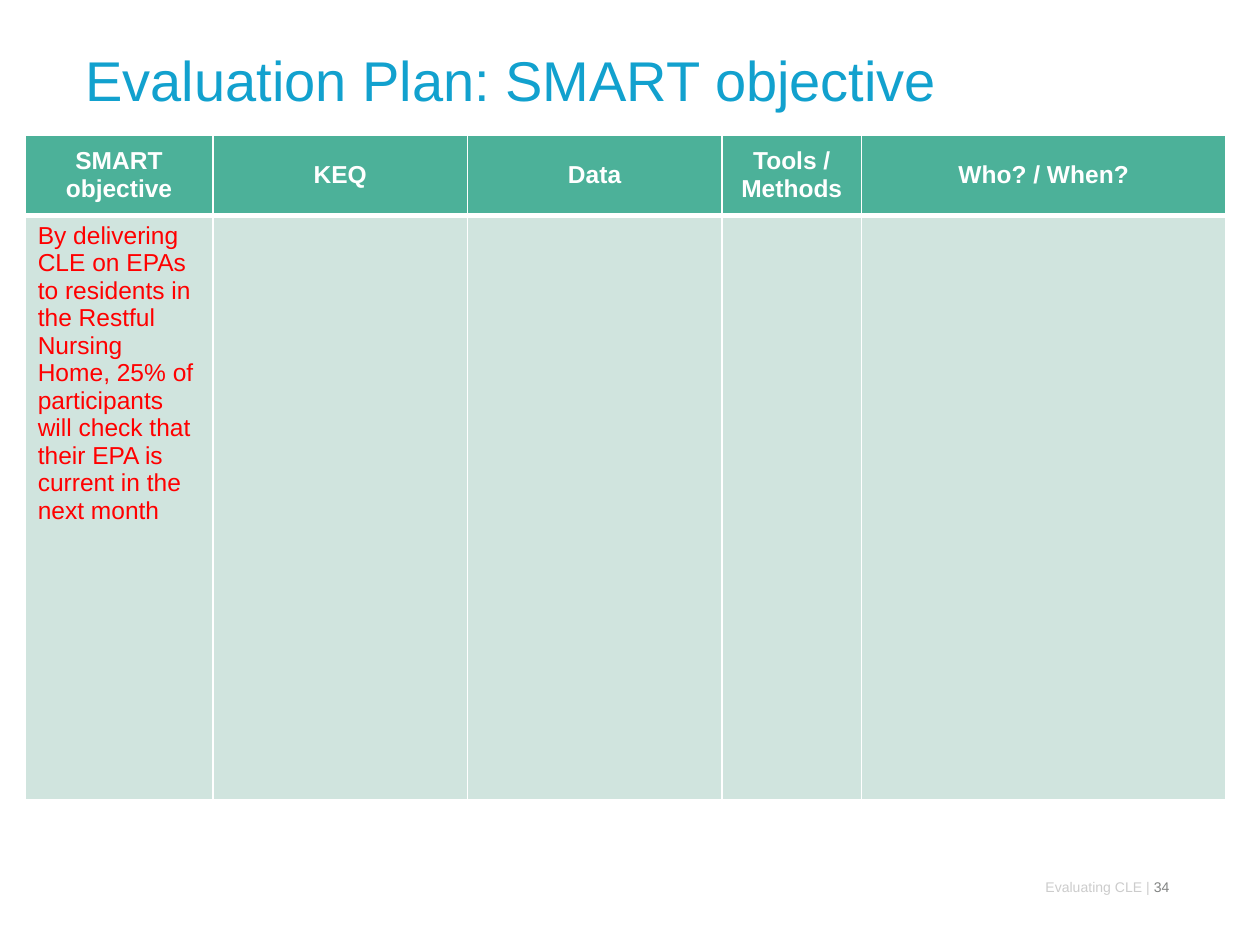
import pptx
import pptx.util
import pptx.dml.color
import pptx.enum.text
import pptx.oxml
import pptx.oxml.ns

Pt = pptx.util.Pt
ALIGN = pptx.enum.text.PP_ALIGN
ANCHOR = pptx.enum.text.MSO_ANCHOR
HUES = {"title": "12A1CE", "head": "4CB199", "body": "D0E4DE", "white": "FFFFFF",
        "red": "FF0000", "pale": "CCCCCC", "grey": "818382"}
HEADS = ["SMART objective", "KEQ", "Data", "Tools / Methods", "Who? /\u00a0When?"]
GOAL = ("By delivering CLE on EPAs to residents in the Restful Nursing Home, "
        "25% of participants will check that their EPA is current\u00a0in the next month")
COLS = [107.28, 145.44, 145.44, 79.92, 208.08]
ROWS = [46.08, 334.08]


def color(name):
    return pptx.dml.color.RGBColor.from_string(HUES[name])


def add_run(para, text, hue, **form):
    run = para.add_run()
    run.text = text
    run.font.color.rgb = color(hue)
    for key, value in {"name": "Arial", **form}.items():
        setattr(run.font, key, value)


def add_text(slide, box, runs, size, align, anchor):
    frame = slide.shapes.add_textbox(*map(Pt, box)).text_frame
    frame.word_wrap = True
    frame.vertical_anchor = anchor
    para = frame.paragraphs[0]
    para.alignment = align
    for text, hue in runs:
        add_run(para, text, hue, size=Pt(size))


def add_edge(cell, side, width):
    # Borders must come before the fill in the cell properties
    props = cell._tc.get_or_add_tcPr()
    line = pptx.oxml.parse_xml(
        f'<a:{side} {pptx.oxml.ns.nsdecls("a")} w="{Pt(width)}"><a:solidFill>'
        f'<a:srgbClr val="{HUES["white"]}"/></a:solidFill></a:{side}>')
    props.append(line)


def fill_cell(cell, text, head):
    edges = {"lnL": 1, "lnR": 1, "lnT": 1 if head else 3, "lnB": 3 if head else 1}
    for side, width in edges.items():
        add_edge(cell, side, width)
    cell.fill.solid()
    cell.fill.fore_color.rgb = color("head" if head else "body")
    cell.vertical_anchor = ANCHOR.MIDDLE if head else ANCHOR.TOP
    para = cell.text_frame.paragraphs[0]
    para.alignment = ALIGN.CENTER if head else ALIGN.LEFT
    if text:
        add_run(para, text, "white" if head else "red", size=Pt(14), bold=head)


def add_plan(slide):
    box = (14.4, 77.04, sum(COLS), sum(ROWS))
    table = slide.shapes.add_table(len(ROWS), len(COLS), *map(Pt, box)).table
    for col, width in zip(table.columns, COLS):
        col.width = Pt(width)
    for row, height in zip(table.rows, ROWS):
        row.height = Pt(height)
    for i, head in enumerate(HEADS):
        fill_cell(table.cell(0, i), head, True)
        fill_cell(table.cell(1, i), "" if i else GOAL, False)


def main():
    deck = pptx.Presentation()
    deck.slide_width, deck.slide_height = Pt(720), Pt(540)
    slide = deck.slides.add_slide(deck.slide_layouts[6])
    # Title
    add_text(slide, (41.76, 17.28, 612, 55.44),
             [("Evaluation Plan: SMART objective\u00a0\u00a0", "title")],
             32, ALIGN.LEFT, ANCHOR.MIDDLE)
    # Evaluation table
    add_plan(slide)
    # Footer with page number
    add_text(slide, (381.6, 498.24, 293.76, 18),
             [("Evaluating CLE | ", "pale"), ("34", "grey")],
             8, ALIGN.RIGHT, ANCHOR.TOP)
    deck.save("out.pptx")


if __name__ == "__main__":
    main()
